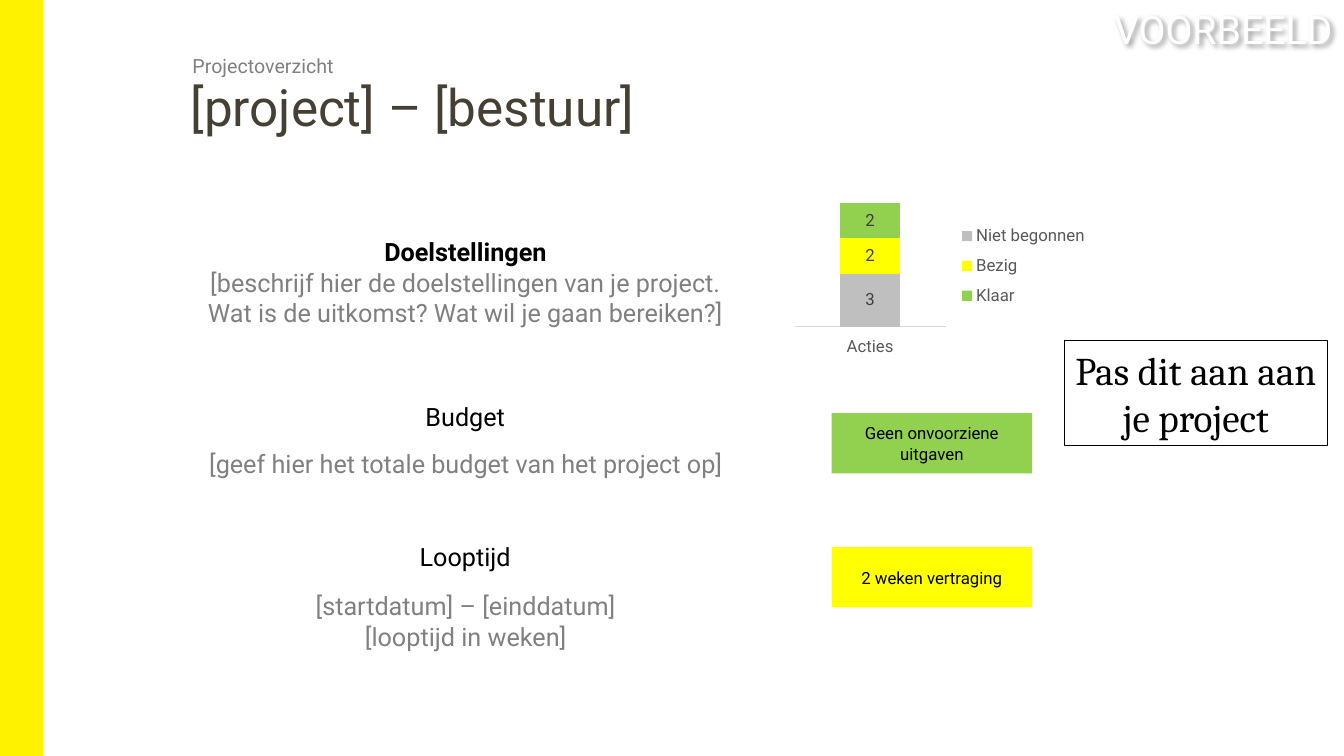
from lxml import etree
from pptx import Presentation
from pptx.chart.data import CategoryChartData
from pptx.dml.color import RGBColor
from pptx.enum.chart import XL_CHART_TYPE, XL_LEGEND_POSITION, XL_TICK_LABEL_POSITION, XL_TICK_MARK
from pptx.enum.shapes import MSO_SHAPE
from pptx.enum.text import MSO_ANCHOR, PP_ALIGN
from pptx.oxml import parse_xml
from pptx.oxml.ns import nsdecls, qn
from pptx.util import Cm, Pt

STACKED = XL_CHART_TYPE.COLUMN_STACKED
LEGEND_BOTTOM = XL_LEGEND_POSITION.BOTTOM
LABELS_LOW = XL_TICK_LABEL_POSITION.LOW
NO_TICK = XL_TICK_MARK.NONE
RECTANGLE = MSO_SHAPE.RECTANGLE
TOP, MIDDLE = MSO_ANCHOR.TOP, MSO_ANCHOR.MIDDLE
LEFT, CENTER = PP_ALIGN.LEFT, PP_ALIGN.CENTER

COLORS = {
    "band": "FFF200", "title": "464034", "muted": "808080", "black": "000000",
    "white": "FFFFFF", "todo": "BFBFBF", "busy": "FFFF00", "done": "92D050",
    "axis_text": "595959", "axis_line": "D9D9D9", "value": "404040",
}
FONT = "Roboto"

OVERVIEW = "Projectoverzicht"
TITLE = "[project] – [bestuur]"
GOALS_HEADING = "Doelstellingen"
GOALS = "[beschrijf hier de doelstellingen van je project. Wat is de uitkomst? Wat wil je gaan bereiken?]"
SECTIONS = [
    ("Budget", 9.98, ["[geef hier het totale budget van het project op]"], (4.45, 11.18, 14.58, 1.02)),
    ("Looptijd", 13.51, ["[startdatum] – [einddatum]", "[looptijd in weken]"], (7.14, 14.76, 9.19, 1.8)),
]
STATUSES = [
    ("Geen onvoorziene uitgaven", 10.41, "done"),
    ("2 weken vertraging", 13.79, "busy"),
]
EXAMPLE = "VOORBEELD"
NOTE = "Pas dit aan aan je project"
CATEGORY = "Acties"
ACTIONS = [("Niet begonnen", 3, "todo"), ("Bezig", 2, "busy"), ("Klaar", 2, "done")]
PLOT_LAYOUT = (0.045, 0.06, 0.465, 0.64)
LEGEND_LAYOUT = (0.54, 0.2, 0.42, 0.45)

prs = Presentation()
prs.slide_width, prs.slide_height = Cm(33.87), Cm(19.05)
slide = prs.slides.add_slide(prs.slide_layouts[6])


def color(name):
    return RGBColor.from_string(COLORS[name])


def set_font(font, size, name, face=FONT, bold=False):
    font.name, font.size, font.bold = face, Pt(size), bold
    font.color.rgb = color(name)


def write(holder, lines, size=18, name="muted", face=FONT, align=CENTER,
          anchor=TOP, bold_first=False, spacing=None, inset=True):
    frame = holder.text_frame
    frame.word_wrap = True
    frame.vertical_anchor = anchor
    if not inset:
        frame.margin_left = frame.margin_right = frame.margin_top = frame.margin_bottom = 0
    for index, line in enumerate(lines):
        paragraph = frame.paragraphs[0] if index == 0 else frame.add_paragraph()
        paragraph.alignment = align
        if spacing:
            paragraph.line_spacing = Pt(spacing)
        run = paragraph.add_run()
        run.text = line
        strong = bold_first and index == 0
        set_font(run.font, size, "black" if strong else name, face, strong)


def text_box(box, lines, **style):
    holder = slide.shapes.add_textbox(*map(Cm, box))
    write(holder, lines, **style)
    return holder


def rectangle(box, fill=None, line=None, width=0.75):
    shape = slide.shapes.add_shape(RECTANGLE, *map(Cm, box))
    shape.shadow.inherit = False
    if fill:
        shape.fill.solid()
        shape.fill.fore_color.rgb = color(fill)
    else:
        shape.fill.background()
    if line:
        shape.line.color.rgb = color(line)
        shape.line.width = Pt(width)
    else:
        shape.line.fill.background()
    return shape


def set_layout(parent, after, bounds, inner=False):
    for previous in parent.findall(qn("c:layout")):
        parent.remove(previous)
    layout = etree.Element(qn("c:layout"))
    manual = etree.SubElement(layout, qn("c:manualLayout"))
    settings = [("layoutTarget", "inner")] if inner else []
    settings += [("xMode", "edge"), ("yMode", "edge"), *zip("xywh", bounds)]
    for tag, value in settings:
        etree.SubElement(manual, qn(f"c:{tag}")).set("val", str(value))
    if after is None:
        parent.insert(0, layout)
    else:
        after.addnext(layout)


def add_actions_chart(box):
    data = CategoryChartData()
    data.categories = [CATEGORY]
    for label, count, _ in ACTIONS:
        data.add_series(label, [count])
    chart = slide.shapes.add_chart(STACKED, *map(Cm, box), data).chart
    chart.has_title = False
    set_font(chart.font, 10, "black")
    plot = chart.plots[0]
    plot.gap_width, plot.overlap, plot.vary_by_categories = 150, 100, False
    for series, (_, _, fill) in zip(plot.series, ACTIONS):
        series.format.fill.solid()
        series.format.fill.fore_color.rgb = color(fill)
        series.data_labels.show_value = True
        set_font(series.data_labels.font, 12, "value")

    categories, values = chart.category_axis, chart.value_axis
    categories.major_tick_mark = NO_TICK
    categories.tick_label_position = LABELS_LOW
    set_font(categories.tick_labels.font, 12, "axis_text")
    categories.format.line.color.rgb = color("axis_line")
    categories.format.line.width = Pt(0.75)
    values.minimum_scale, values.maximum_scale = 0, 8
    values.has_major_gridlines = False
    values.visible = False

    chart.has_legend = True
    legend = chart.legend
    legend.position = LEGEND_BOTTOM
    legend.include_in_layout = False
    set_font(legend.font, 12, "axis_text")
    root = chart.element
    set_layout(root.find(".//" + qn("c:plotArea")), None, PLOT_LAYOUT, inner=True)
    legend_xml = root.find(".//" + qn("c:legend"))
    set_layout(legend_xml, legend_xml.find(qn("c:legendPos")), LEGEND_LAYOUT)


rectangle((0, 0, 1.07, 19.05), "band", "band", 1)
text_box((4.8, 2.11, 21.77, 1.73), [TITLE], size=36.6, name="title", align=LEFT, spacing=38, inset=False)
text_box((4.6, 1.24, 7.87, 0.86), [OVERVIEW], size=14, align=LEFT)
text_box((4.72, 5.84, 14.02, 2.57), [GOALS_HEADING, GOALS], bold_first=True)
add_actions_chart((19.66, 4.34, 8.18, 5.56))

for heading, top, details, details_box in SECTIONS:
    text_box((9.5, top, 4.45, 1.02), [heading], name="black")
    text_box(details_box, details)

for status, top, fill in STATUSES:
    write(rectangle((20.96, top, 5.05, 1.52), fill), [status], size=12, name="black", anchor=MIDDLE)

example = text_box((27.79, 0, 6.07, 1.45), [EXAMPLE], size=28, name="white")
example.element.spPr.append(parse_xml(
    f'<a:effectLst {nsdecls("a")}><a:outerShdw blurRad="50800" dist="38100" dir="2700000" algn="tl">'
    '<a:srgbClr val="000000"><a:alpha val="40000"/></a:srgbClr></a:outerShdw></a:effectLst>'))

write(rectangle((26.82, 8.59, 6.63, 2.64), line="black"), [NOTE], size=28, name="black", face="Cambria")

prs.save("out.pptx")
